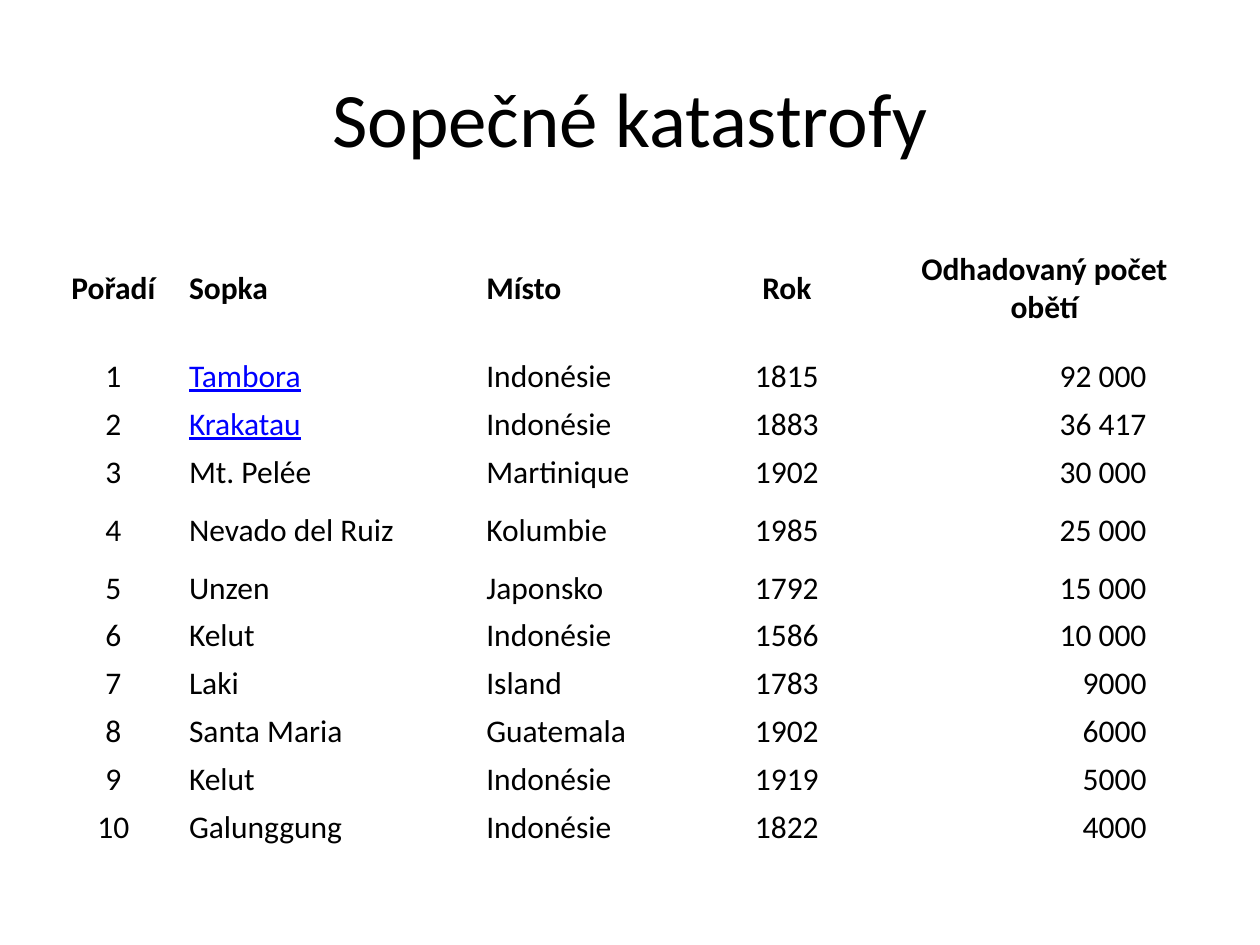
from pptx import Presentation
from pptx.dml.color import RGBColor
from pptx.enum.text import MSO_ANCHOR, PP_ALIGN
from pptx.util import Inches, Pt

COLORS = {"text": "000000", "link": "0000FF"}
FONT = "Calibri"
LEFT, MID, RIGHT = PP_ALIGN.LEFT, PP_ALIGN.CENTER, PP_ALIGN.RIGHT

WIDTHS = [1.1, 2.36, 1.65, 1.57, 2.52]
HEAD_HIGH, ROW_HIGH, TALL_HIGH = 1.02, 0.38, 0.54
TALL_ROW = 4
HEAD_ALIGN = [MID, LEFT, LEFT, MID, MID]
BODY_ALIGN = [MID, LEFT, LEFT, MID, RIGHT]
LINKS = {"Tambora", "Krakatau"}

HEADS = ["Pořadí", "Sopka", "Místo", "Rok", "Odhadovaný počet obětí"]
PEAKS = [
    ("Tambora", "Indonésie", "1815", "92 000"),
    ("Krakatau", "Indonésie", "1883", "36 417"),
    ("Mt. Pelée", "Martinique", "1902", "30 000"),
    ("Nevado del Ruiz", "Kolumbie", "1985", "25 000"),
    ("Unzen", "Japonsko", "1792", "15 000"),
    ("Kelut", "Indonésie", "1586", "10 000"),
    ("Laki", "Island", "1783", "9000"),
    ("Santa Maria", "Guatemala", "1902", "6000"),
    ("Kelut", "Indonésie", "1919", "5000"),
    ("Galunggung", "Indonésie", "1822", "4000"),
]


def write(frame, text, size, align, color="text", bold=False):
    para = frame.paragraphs[0]
    para.text = text
    para.alignment = align
    font = para.font
    font.name = FONT
    font.size = Pt(size)
    font.bold = bold
    font.color.rgb = RGBColor.from_string(COLORS[color])
    return para


def add_title(slide, text):
    box = slide.shapes.add_textbox(Inches(0.5), Inches(0.3), Inches(9), Inches(1.25))
    frame = box.text_frame
    frame.word_wrap = True
    frame.vertical_anchor = MSO_ANCHOR.MIDDLE
    write(frame, text, 44, MID)


def fill_cell(cell, text, align, bold):
    cell.fill.background()
    cell.vertical_anchor = MSO_ANCHOR.MIDDLE
    cell.margin_left = Inches(0.05)
    cell.margin_right = Inches(0.45 if align == RIGHT else 0.05)
    cell.margin_top = cell.margin_bottom = Inches(0.03)
    link = text in LINKS
    para = write(cell.text_frame, text, 18, align, "link" if link else "text", bold)
    if link:
        para.runs[0].font.underline = True
        para.runs[0].font.color.rgb = RGBColor.from_string(COLORS["link"])


def add_grid(slide):
    rows = [HEADS] + [(str(rank), *peak) for rank, peak in enumerate(PEAKS, 1)]
    highs = [HEAD_HIGH] + [ROW_HIGH] * len(PEAKS)
    highs[TALL_ROW] = TALL_HIGH
    table = slide.shapes.add_table(
        len(rows), len(WIDTHS), Inches(0.35), Inches(1.78),
        Inches(sum(WIDTHS)), Inches(sum(highs)),
    ).table
    table.first_row = table.horz_banding = False
    for col, width in zip(table.columns, WIDTHS):
        col.width = Inches(width)
    for r, (row, high) in enumerate(zip(rows, highs)):
        table.rows[r].height = Inches(high)
        head = r == 0
        for c, text in enumerate(row):
            align = (HEAD_ALIGN if head else BODY_ALIGN)[c]
            fill_cell(table.cell(r, c), text, align, head)


def main():
    deck = Presentation()
    deck.slide_width, deck.slide_height = Inches(10), Inches(7.5)
    slide = deck.slides.add_slide(deck.slide_layouts[6])
    add_title(slide, "Sopečné katastrofy")
    add_grid(slide)
    deck.save("out.pptx")


if __name__ == "__main__":
    main()
